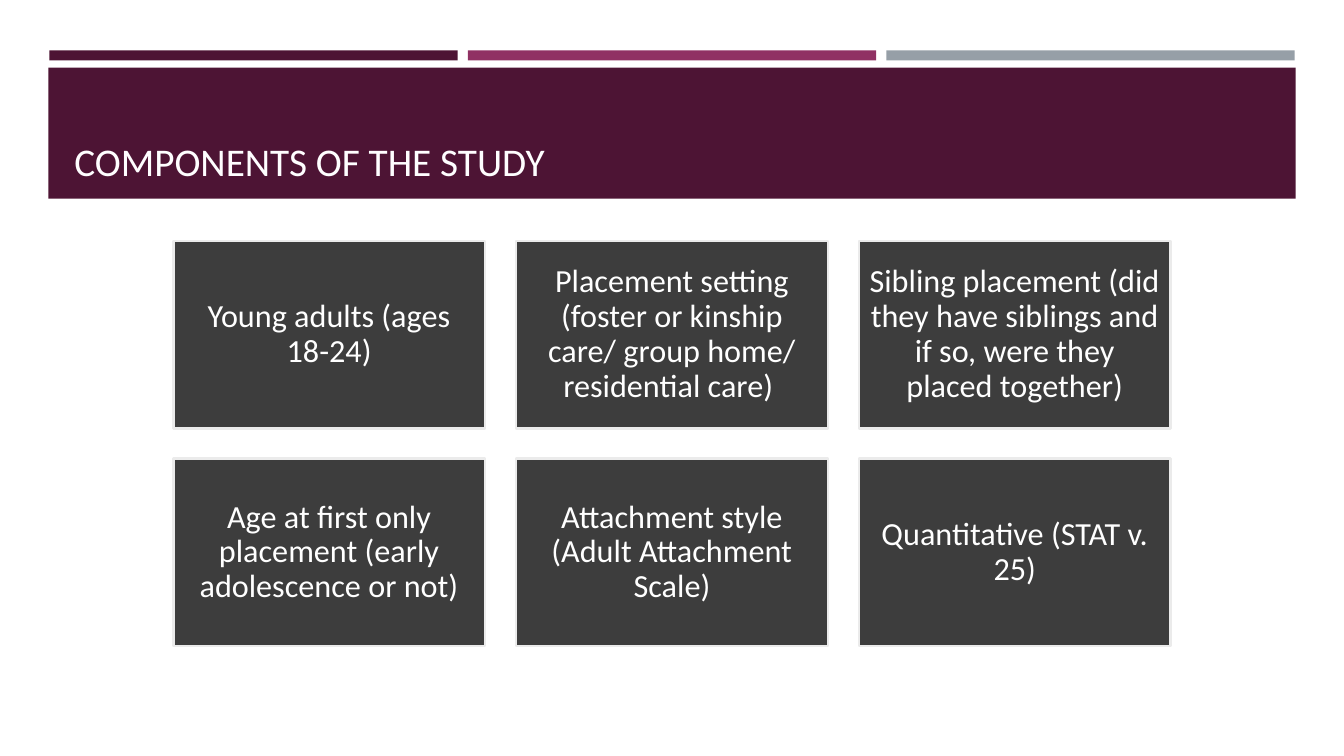
from pptx import Presentation
from pptx import util as u
from pptx.dml.color import RGBColor
from pptx.enum import shapes, text

PLUM = RGBColor(0x4D, 0x14, 0x34)
MAGENTA = RGBColor(0x90, 0x31, 0x63)
GREY = RGBColor(0x96, 0x9F, 0xA7)
CHARCOAL = RGBColor(0x3D, 0x3D, 0x3D)
PALE = RGBColor(0xEB, 0xEB, 0xEB)
OFF_WHITE = RGBColor(0xFF, 0xFE, 0xFF)
WHITE = RGBColor(0xFF, 0xFF, 0xFF)

COMPONENTS = [
    "Young adults (ages 18-24)",
    "Placement setting (foster or kinship care/ group home/ residential care) ",
    "Sibling placement (did they have siblings and if so, were they placed together)",
    "Age at first only placement (early adolescence or not)",
    "Attachment style (Adult Attachment Scale)",
    "Quantitative (STAT v. 25)",
]


class Deck:
    font = "Calibri"

    def __init__(self, width, height):
        self.prs = Presentation()
        self.prs.slide_width = u.Inches(width)
        self.prs.slide_height = u.Inches(height)
        self.s = self.prs.slides.add_slide(self.prs.slide_layouts[6])

    def bar(self, box, fill):
        sp = self.s.shapes.add_shape(shapes.MSO_SHAPE.RECTANGLE, *map(u.Inches, box))
        sp.shadow.inherit = False
        sp.fill.solid()
        sp.fill.fore_color.rgb = fill
        sp.line.fill.background()
        return sp

    def set_text(self, sp, words, size, color, frame, para):
        """Fill a shape with one paragraph, formatted from two dicts."""
        tf = sp.text_frame
        p = tf.paragraphs[0]
        r = p.add_run()
        r.text = words
        r.font.color.rgb = color
        font = {"name": self.font, "size": u.Pt(size)}
        for target, values in ((tf, frame), (p, para), (r.font, font)):
            for name, value in values.items():
                setattr(target, name, value)

    def title(self, box, words):
        sp = self.s.shapes.add_textbox(*map(u.Inches, box))
        frame = {"word_wrap": True, "vertical_anchor": text.MSO_ANCHOR.BOTTOM}
        self.set_text(sp, words, 28, OFF_WHITE, frame, {"alignment": text.PP_ALIGN.LEFT})

    def card(self, box, words):
        sp = self.bar(box, CHARCOAL)
        sp.line.color.rgb = PALE
        sp.line.width = u.Pt(1.75)
        frame = {"word_wrap": True, "vertical_anchor": text.MSO_ANCHOR.MIDDLE}
        for side in ("left", "top", "right", "bottom"):
            frame["margin_" + side] = u.Inches(0.1)
        para = {"alignment": text.PP_ALIGN.CENTER, "line_spacing": 0.9}
        self.set_text(sp, words, 23, WHITE, frame, para)


def main():
    deck = Deck(13.33, 7.5)
    for i, color in enumerate((PLUM, MAGENTA, GREY)):
        deck.bar((0.49 + 4.15 * i, 0.5, 4.05, 0.1), color)
    deck.bar((0.48, 0.67, 12.37, 1.3), PLUM)
    deck.title((0.64, 0.77, 12.06, 1.11), "COMPONENTS OF THE STUDY")
    for i, words in enumerate(COMPONENTS):
        row, col = divmod(i, 3)
        deck.card((1.72 + 3.4 * col, 2.39 + 2.16 * row, 3.09, 1.86), words)
    deck.prs.save("out.pptx")


if __name__ == "__main__":
    main()
